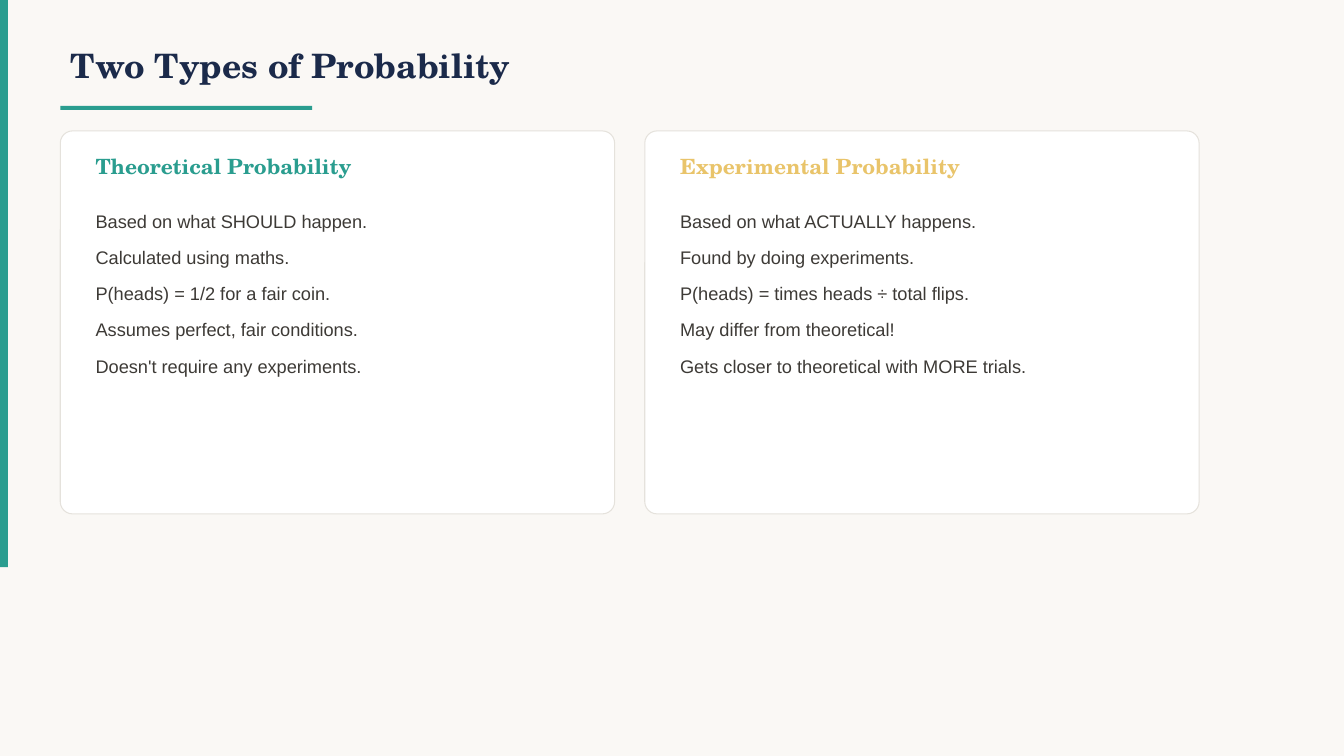
from dataclasses import dataclass
from typing import Any

from pptx import Presentation
from pptx.dml.color import RGBColor
from pptx.enum.shapes import MSO_SHAPE
from pptx.enum.text import MSO_ANCHOR, PP_ALIGN
from pptx.shapes.autoshape import Shape
from pptx.slide import Slide
from pptx.util import Cm, Pt


@dataclass(frozen=True)
class Theme:
    background: RGBColor = RGBColor(0xFA, 0xF8, 0xF5)
    navy: RGBColor = RGBColor(0x1B, 0x2A, 0x4A)
    teal: RGBColor = RGBColor(0x2A, 0x9D, 0x8F)
    gold: RGBColor = RGBColor(0xE9, 0xC4, 0x6A)
    ink: RGBColor = RGBColor(0x3D, 0x3A, 0x36)
    card: RGBColor = RGBColor(0xFF, 0xFF, 0xFF)
    border: RGBColor = RGBColor(0xE5, 0xE2, 0xDC)
    heading_font: str = "TeX Gyre Schola"
    body_font: str = "Arial"
    title_size: Pt = Pt(24)
    heading_size: Pt = Pt(15)
    body_size: Pt = Pt(13)


@dataclass(frozen=True)
class Box:
    left: float
    top: float
    width: float
    height: float

    def lengths(self) -> tuple[Cm, ...]:
        return Cm(self.left), Cm(self.top), Cm(self.width), Cm(self.height)


@dataclass(frozen=True)
class ProbabilityType:
    heading: str
    accent: RGBColor
    facts: list[str]


THEME = Theme()
MARGIN = 1.52
CARD_TOP, CARD_WIDTH, CARD_HEIGHT, CARD_GAP = 3.3, 13.97, 9.65, 0.76
CARD_PADDING = 0.64

PROBABILITY_TYPES = [
    ProbabilityType("Theoretical Probability", THEME.teal, [
        "Based on what SHOULD happen.",
        "Calculated using maths.",
        "P(heads) = 1/2 for a fair coin.",
        "Assumes perfect, fair conditions.",
        "Doesn't require any experiments.",
    ]),
    ProbabilityType("Experimental Probability", THEME.gold, [
        "Based on what ACTUALLY happens.",
        "Found by doing experiments.",
        "P(heads) = times heads ÷ total flips.",
        "May differ from theoretical!",
        "Gets closer to theoretical with MORE trials.",
    ]),
]


def set_attributes(target: Any, values: dict[str, Any]) -> None:
    for attribute, value in values.items():
        setattr(target, attribute, value)


def write(holder: Shape, lines: list[str], color: RGBColor,
          font: dict[str, Any], paragraph_format: dict[str, Any],
          anchor: MSO_ANCHOR) -> None:
    frame = holder.text_frame
    set_attributes(frame, {"word_wrap": True, "vertical_anchor": anchor})
    frame.text = "\n".join(lines)
    for paragraph in frame.paragraphs:
        set_attributes(paragraph, {"alignment": PP_ALIGN.LEFT} | paragraph_format)
        set_attributes(paragraph.font, font)
        paragraph.font.color.rgb = color


def write_heading(holder: Shape, text: str, color: RGBColor, size: Pt) -> None:
    font = {"name": THEME.heading_font, "size": size, "bold": True}
    write(holder, [text], color, font, {}, MSO_ANCHOR.MIDDLE)


def add_panel(slide: Slide, kind: MSO_SHAPE, box: Box, fill: RGBColor) -> Shape:
    panel = slide.shapes.add_shape(kind, *box.lengths())
    panel.shadow.inherit = False
    panel.fill.solid()
    panel.fill.fore_color.rgb = fill
    panel.line.fill.background()
    return panel


def add_card(slide: Slide, left: float, content: ProbabilityType) -> None:
    card = add_panel(slide, MSO_SHAPE.ROUNDED_RECTANGLE,
                     Box(left, CARD_TOP, CARD_WIDTH, CARD_HEIGHT), THEME.card)
    card.adjustments[0] = 0.032
    card.line.color.rgb = THEME.border
    card.line.width = Pt(0.75)

    text_left = left + CARD_PADDING
    text_width = CARD_WIDTH - 2 * CARD_PADDING
    heading_box = Box(text_left, CARD_TOP + 0.38, text_width, 1.02)
    heading = slide.shapes.add_textbox(*heading_box.lengths())
    write_heading(heading, content.heading, content.accent, THEME.heading_size)

    facts_box = Box(text_left, CARD_TOP + 1.65, text_width, 7.37)
    facts = slide.shapes.add_textbox(*facts_box.lengths())
    write(facts, content.facts, THEME.ink,
          {"name": THEME.body_font, "size": THEME.body_size},
          {"line_spacing": 1.4, "space_after": Pt(4)}, MSO_ANCHOR.TOP)


def main() -> None:
    presentation = Presentation()
    set_attributes(presentation, {"slide_width": Cm(33.87), "slide_height": Cm(19.05)})
    slide = presentation.slides.add_slide(presentation.slide_layouts[5])
    slide.background.fill.solid()
    slide.background.fill.fore_color.rgb = THEME.background

    # Side bar, title and its underline
    add_panel(slide, MSO_SHAPE.RECTANGLE, Box(0, 0, 0.2, 14.29), THEME.teal)
    title = slide.shapes.title
    title_box = Box(MARGIN, 0.76, 25.4, 1.78)
    set_attributes(title, dict(zip(("left", "top", "width", "height"),
                                   title_box.lengths())))
    write_heading(title, "Two Types of Probability", THEME.navy, THEME.title_size)
    add_panel(slide, MSO_SHAPE.RECTANGLE, Box(MARGIN, 2.67, 6.35, 0.1), THEME.teal)

    # One card per type of probability
    for column, content in enumerate(PROBABILITY_TYPES):
        add_card(slide, MARGIN + column * (CARD_WIDTH + CARD_GAP), content)

    presentation.save("out.pptx")


if __name__ == "__main__":
    main()
